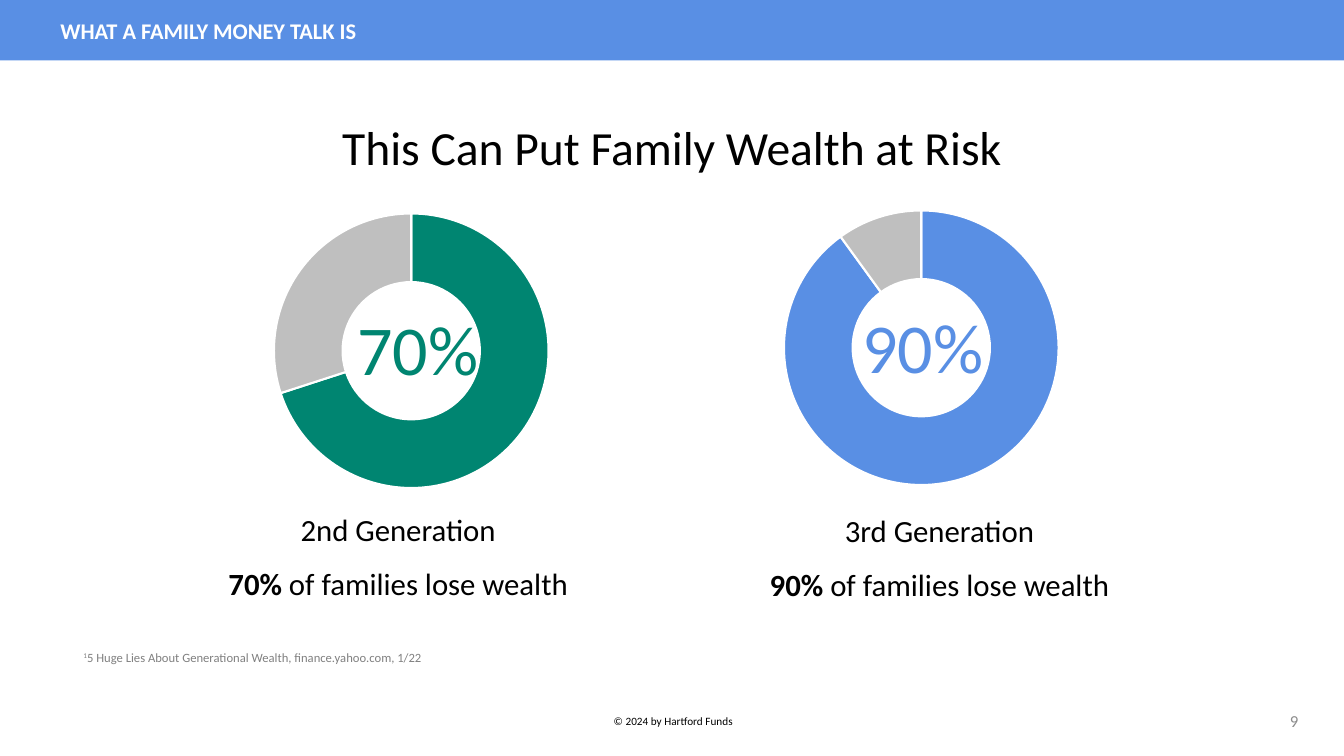
from dataclasses import dataclass

from pptx import Presentation
from pptx import util as u
from pptx.chart import data
from pptx.dml import color
from pptx.enum import chart as charts, shapes, text


@dataclass(frozen=True)
class Theme:
    font: str = "Calibri"
    blue: str = "598FE4"
    green: str = "008571"
    remainder: str = "BFBFBF"
    ink: str = "000000"
    paper: str = "FFFFFF"
    note: str = "808080"
    number: str = "8C8C8C"
    title_size: int = 34
    percent_size: int = 50
    label_size: int = 22
    header_size: int = 16
    number_size: int = 12
    chart_size: int = 10
    note_size: int = 9
    footer_size: int = 8


def rgb(value):
    return color.RGBColor.from_string(value)


class SlideBuilder:
    COLUMNS, ROWS = 40, 30

    def __init__(self, deck, theme):
        self.theme = theme
        self.column = deck.slide_width / self.COLUMNS
        self.row = deck.slide_height / self.ROWS
        self.slide = deck.slides.add_slide(deck.slide_layouts[6])

    def place(self, left, top, width, height):
        return (round(left * self.column), round(top * self.row),
                round(width * self.column), round(height * self.row))

    def band(self, area, fill):
        bar = self.slide.shapes.add_shape(shapes.MSO_SHAPE.RECTANGLE, *self.place(*area))
        bar.shadow.inherit = False
        bar.fill.solid()
        bar.fill.fore_color.rgb = rgb(fill)
        bar.line.fill.background()

    def label(self, area, *paragraphs, size, ink=None, bold=False, align="LEFT",
              anchor="MIDDLE", after=0, inset=True):
        frame = self.slide.shapes.add_textbox(*self.place(*area)).text_frame
        frame.word_wrap = True
        frame.vertical_anchor = text.MSO_ANCHOR[anchor]
        if not inset:
            frame.margin_left = frame.margin_right = 0
            frame.margin_top = frame.margin_bottom = 0
        for index, pieces in enumerate(paragraphs):
            paragraph = frame.add_paragraph() if index else frame.paragraphs[0]
            paragraph.alignment = text.PP_ALIGN[align]
            paragraph.space_after = u.Pt(after)
            for words, style in [(pieces, "")] if isinstance(pieces, str) else pieces:
                run = paragraph.add_run()
                run.text = words
                run.font.name = self.theme.font
                run.font.size = u.Pt(size)
                run.font.bold = bold or style == "bold"
                run.font.color.rgb = rgb(ink or self.theme.ink)
                if style == "superscript":
                    run.font._element.set("baseline", "30000")

    def doughnut(self, area, share, fill):
        shares = data.CategoryChartData()
        shares.categories = ["1", "2"]
        shares.add_series("Series 1", (share, 100 - share))
        ring = self.slide.shapes.add_chart(
            charts.XL_CHART_TYPE.DOUGHNUT, *self.place(*area), shares).chart
        ring.has_legend = False
        ring.has_title = False
        ring.font.name = self.theme.font
        ring.font.size = u.Pt(self.theme.chart_size)
        ring.font.color.rgb = rgb(self.theme.ink)
        plot = ring.plots[0]
        plot.vary_by_categories = True
        plot._element.find("{*}holeSize").set("val", "65")
        for index, shade in enumerate((fill, self.theme.remainder)):
            slice_format = plot.series[0].points[index].format
            slice_format.fill.solid()
            slice_format.fill.fore_color.rgb = rgb(shade)
            slice_format.line.color.rgb = rgb(self.theme.paper)
            slice_format.line.width = u.Pt(1.5)


def main():
    deck = Presentation()
    deck.slide_width, deck.slide_height = u.Inches(13.33), u.Inches(7.5)
    theme = Theme()
    page = SlideBuilder(deck, theme)

    page.band((0, 0, 40, 2.4), theme.blue)
    page.label((1.5, 0, 21.3, 2.4), "WHAT A FAMILY MONEY TALK IS",
               size=theme.header_size, ink=theme.paper, bold=True)
    page.label((3.75, 27.32, 32.58, 2.6), "© 2024 by Hartford Funds",
               size=theme.footer_size, align="CENTER")
    page.label((27, 27.8, 11.64, 1.6), "9", size=theme.number_size,
               ink=theme.number, align="RIGHT", inset=False)
    page.label((2, 3.32, 36, 5), "This Can Put Family Wealth at Risk",
               size=theme.title_size, align="CENTER")
    page.label((2.19, 25.6, 22.86, 1),
               [("1", "superscript"),
                ("5 Huge Lies About Generational Wealth, finance.yahoo.com, 1/22", "")],
               size=theme.note_size, ink=theme.note)

    generations = (
        ("2nd Generation", 70, theme.green, (5.7, 7.92), (9.93, 11.92), (5.31, 20.08, 13.08)),
        ("3rd Generation", 90, theme.blue, (20.88, 7.8), (24.96, 11.84), (20.55, 20.12, 14.82)),
    )
    for generation, share, shade, ring_at, percent_at, caption_at in generations:
        page.doughnut((*ring_at, 13.08, 12), share, shade)
        page.label((*percent_at, 5.01, 3.6), f"{share}%", size=theme.percent_size,
                   ink=shade, align="CENTER", anchor="TOP", after=18)
        page.label((*caption_at, 6.68), generation,
                   [(f"{share}% ", "bold"), ("of families lose wealth", "")],
                   size=theme.label_size, align="CENTER", anchor="TOP", after=12)

    deck.save("out.pptx")


if __name__ == "__main__":
    main()
